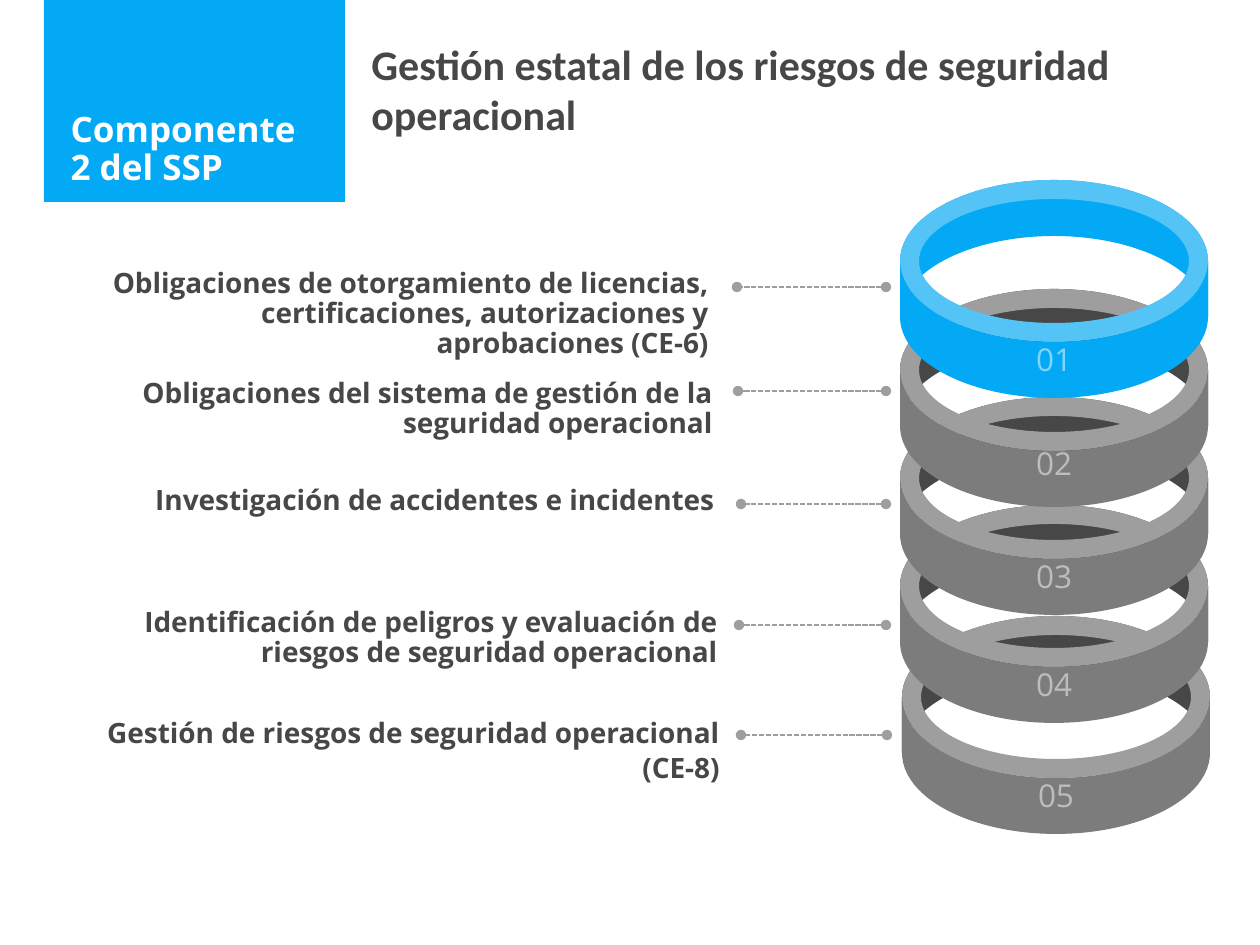
from dataclasses import dataclass

from lxml.etree import SubElement
from pptx import Presentation
from pptx.dml.color import RGBColor
from pptx.enum.dml import MSO_LINE
from pptx.enum.shapes import MSO_CONNECTOR, MSO_SHAPE
from pptx.enum.text import MSO_ANCHOR, MSO_AUTO_SIZE, PP_ALIGN
from pptx.oxml.ns import qn
from pptx.util import Pt

PX = 914400 / 126


@dataclass(frozen=True)
class Theme:
    blue: RGBColor = RGBColor(0x03, 0xA9, 0xF5)
    light_blue: RGBColor = RGBColor(0x54, 0xC3, 0xF6)
    dark: RGBColor = RGBColor(0x47, 0x47, 0x47)
    gray: RGBColor = RGBColor(0x7C, 0x7C, 0x7C)
    light_gray: RGBColor = RGBColor(0x9E, 0x9E, 0x9E)
    white: RGBColor = RGBColor(0xFF, 0xFF, 0xFF)
    body_font: str = "Open Sans"
    heading_font: str = "Calibri"
    heading_size: int = 24
    title_size: int = 20
    number_size: int = 18
    label_size: int = 16


theme = Theme()


def px(*lengths):
    return [round(length * PX) for length in lengths]


def add_span(para, text, size, color, font=theme.body_font, bold=True):
    span = para.add_run()
    span.text = text
    span.font.name = font
    span.font.size = Pt(size)
    span.font.bold = bold
    span.font.color.rgb = color
    return span


deck = Presentation()
deck.slide_width, deck.slide_height = px(1260, 945)
page = deck.slides.add_slide(deck.slide_layouts[5])
shapes = page.shapes

panel = shapes.add_shape(MSO_SHAPE.RECTANGLE, *px(44, -1, 301, 203))
panel.shadow.inherit = False
panel.fill.solid()
panel.fill.fore_color.rgb = theme.blue
panel.line.fill.background()

title = shapes.title
title.left, title.top, title.width, title.height = px(58, 10, 270, 184)
shapes._spTree.append(title._element)
frame = title.text_frame
frame.word_wrap = True
frame.auto_size = MSO_AUTO_SIZE.NONE
frame.vertical_anchor = MSO_ANCHOR.BOTTOM
para = frame.paragraphs[0]
para.alignment = PP_ALIGN.LEFT
para.line_spacing = 0.9
add_span(para, "Componente 2 del SSP", theme.title_size, theme.white)

box = shapes.add_textbox(*px(359, 32, 882, 115))
box.text_frame.word_wrap = True
add_span(box.text_frame.paragraphs[0],
         "Gestión estatal de los riesgos de seguridad operacional",
         theme.heading_size, theme.dark, theme.heading_font)

RADIUS_X, RADIUS_Y = 154, 81
RIM = 19
BAND = 56
HALF_TURN = 180 * 60000

gray_ring = (theme.dark, theme.light_gray, theme.gray)
blue_ring = (theme.blue, theme.light_blue, theme.blue)

levels = [
    ("05", 902, 616, 59, gray_ring, 713, 674, 735, (741, 887),
     ["Gestión de riesgos de seguridad operacional", "(CE-8)"]),
    ("04", 900, 505, 59, gray_ring, 602, 672, 625, (739, 886),
     ["Identificación de peligros y evaluación de riesgos de seguridad operacional"]),
    ("03", 900, 397, 59, gray_ring, 480, 669, 504, (741, 886),
     ["Investigación de accidentes e incidentes"]),
    ("02", 900, 289, 49, gray_ring, 373, 667, 391, (738, 886),
     ["Obligaciones del sistema de gestión de la seguridad operacional"]),
    ("01", 900, 180, 59, blue_ring, 263, 663, 287, (737, 886),
     ["Obligaciones de otorgamiento de licencias, certificaciones, "
      "autorizaciones y aprobaciones (CE-6)"]),
]

for number, left, top, inset, colors, label_top, width, line_y, ends, texts in levels:
    walls = []
    for wall_top, edge, sweep in ((top, RADIUS_Y, HALF_TURN),
                                  (top + RADIUS_Y, 0, -HALF_TURN)):
        right, bottom = left + 2 * RADIUS_X, wall_top + RADIUS_Y + BAND
        builder = shapes.build_freeform(*px(left, wall_top))
        builder.add_line_segments(
            [px(right, wall_top), px(right, bottom), px(left, bottom)])
        wall = builder.convert_to_shape()
        outline = wall._element.find(".//" + qn("a:path"))
        for step in list(outline):
            outline.remove(step)
        for command, x, y, start, turn in (
                ("a:moveTo", 0, edge, HALF_TURN, sweep),
                ("a:lnTo", 2 * RADIUS_X, edge + BAND, 0, -sweep)):
            point_x, point_y, radius_x, radius_y = px(x, y, RADIUS_X, RADIUS_Y)
            move = SubElement(outline, qn(command))
            SubElement(move, qn("a:pt"), x=str(point_x), y=str(point_y))
            SubElement(outline, qn("a:arcTo"), wR=str(radius_x), hR=str(radius_y),
                       stAng=str(start), swAng=str(turn))
        SubElement(outline, qn("a:close"))
        walls.append(wall)

    back, front = walls
    rim = shapes.add_shape(MSO_SHAPE.DONUT, *px(left, top, 2 * RADIUS_X, 2 * RADIUS_Y))
    rim.adjustments[0] = RIM / (2 * RADIUS_Y)
    shapes._spTree.append(front._element)
    for part, color in zip((back, rim, front), colors):
        part.shadow.inherit = False
        part.fill.solid()
        part.fill.fore_color.rgb = color
        part.line.fill.background()

    frame = front.text_frame
    frame.vertical_anchor = MSO_ANCHOR.MIDDLE
    frame.margin_left = frame.margin_right = frame.margin_bottom = 0
    frame.margin_top = px(inset)[0]
    para = frame.paragraphs[0]
    para.alignment = PP_ALIGN.CENTER
    span = add_span(para, number, theme.number_size, theme.white, bold=False)
    tint = span._r.find(".//" + qn("a:srgbClr"))
    SubElement(tint, qn("a:alpha"), val="50000")

    box = shapes.add_textbox(*px(58, label_top, width, 94))
    frame = box.text_frame
    frame.word_wrap = True
    for index, text in enumerate(texts):
        para = frame.add_paragraph() if index else frame.paragraphs[0]
        para.alignment = PP_ALIGN.RIGHT
        para.line_spacing = 0.9
        para.space_before = Pt(3 if index else 0)
        add_span(para, text, theme.label_size, theme.dark)

    line_left, line_right = ends
    leader = shapes.add_connector(
        MSO_CONNECTOR.STRAIGHT, *px(line_right, line_y, line_left, line_y))
    leader.line.color.rgb = theme.light_gray
    leader.line.width = Pt(1)
    leader.line.dash_style = MSO_LINE.SQUARE_DOT
    stroke = leader.line._get_or_add_ln()
    SubElement(stroke, qn("a:headEnd"), type="oval")
    SubElement(stroke, qn("a:tailEnd"), type="oval")
    SubElement(leader._element.spPr, qn("a:effectLst"))

deck.save("out.pptx")
